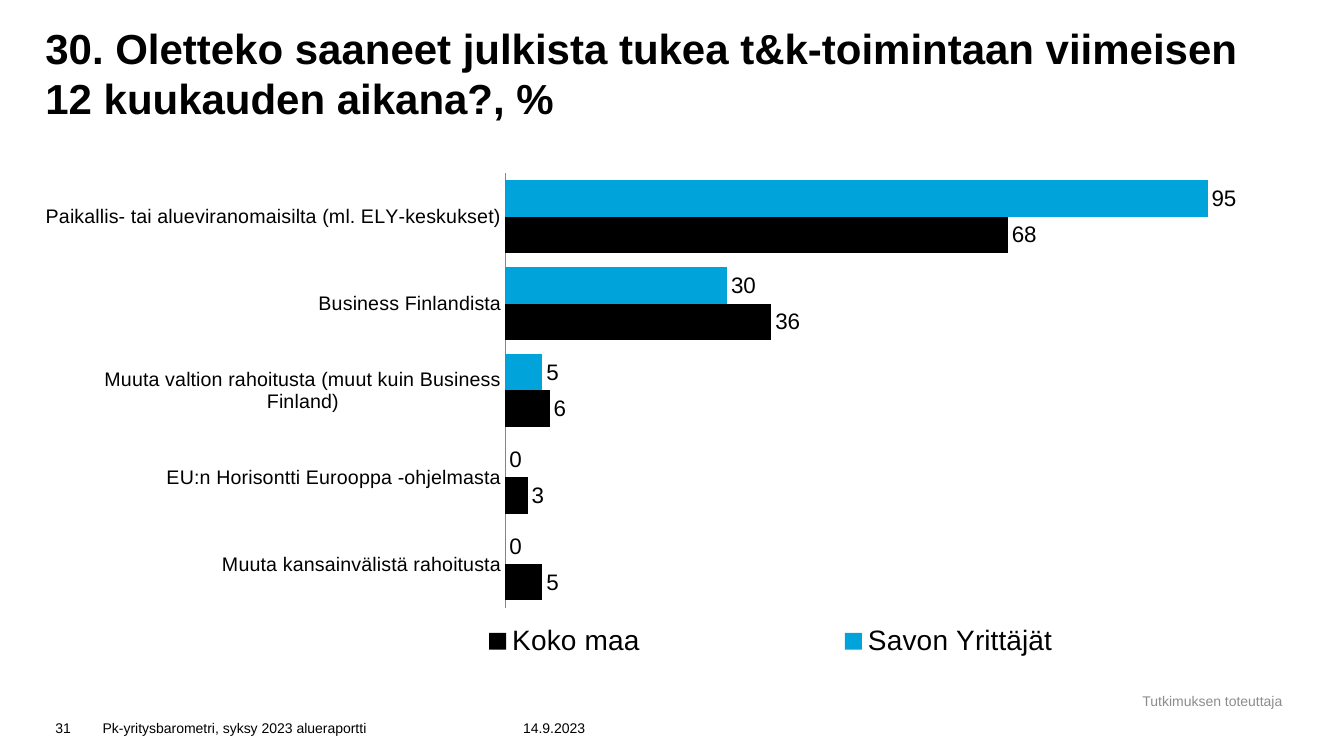
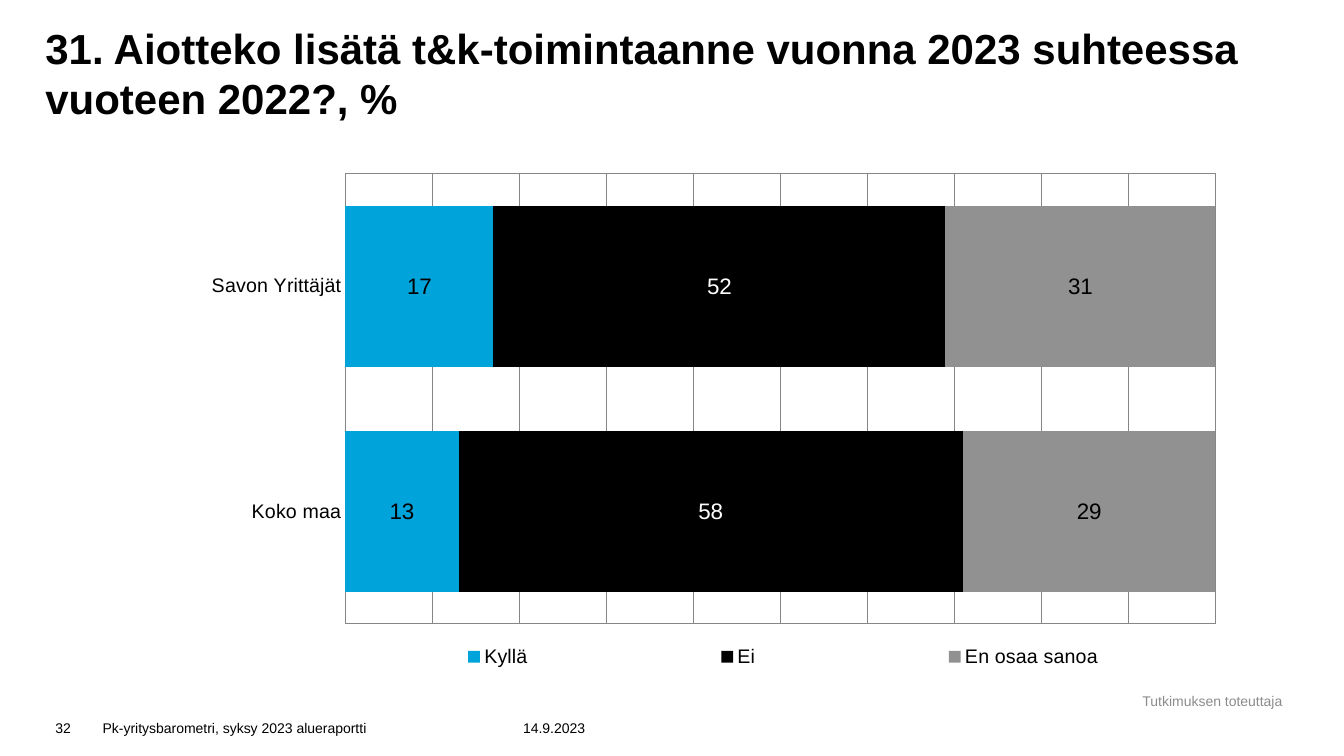
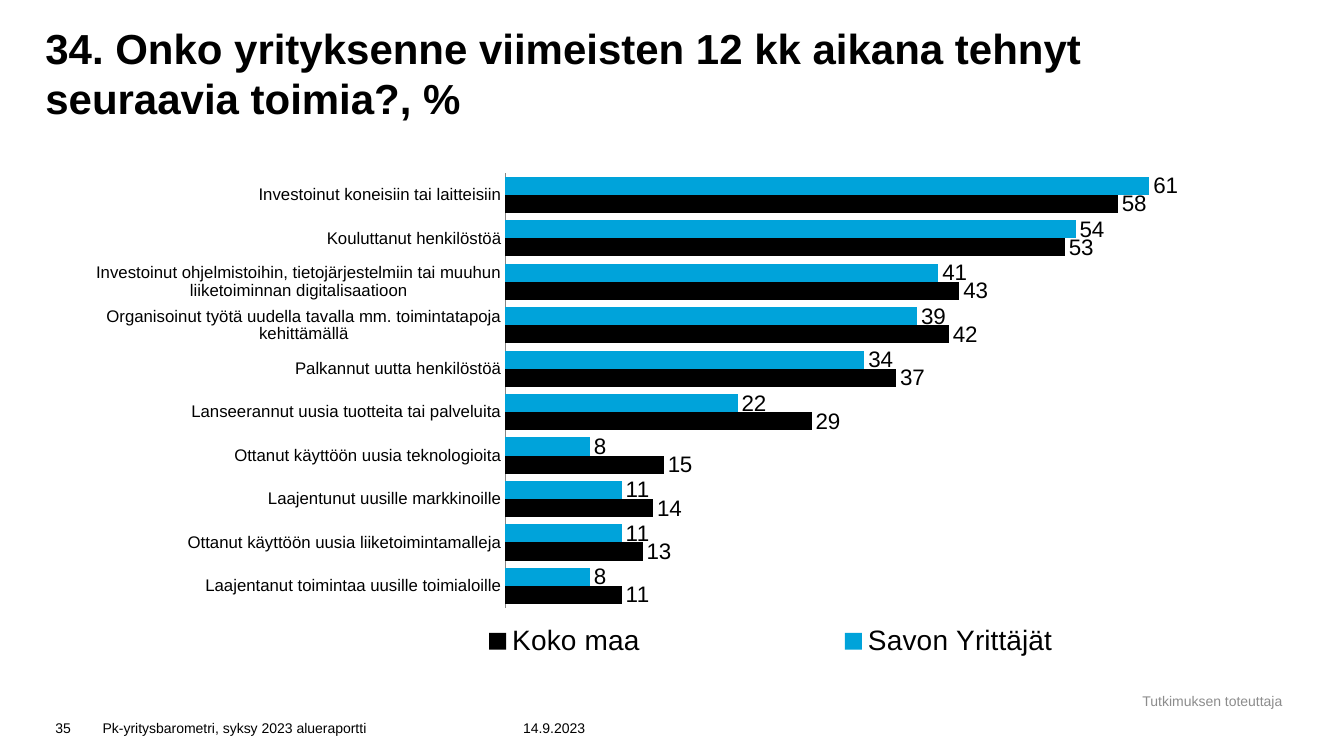
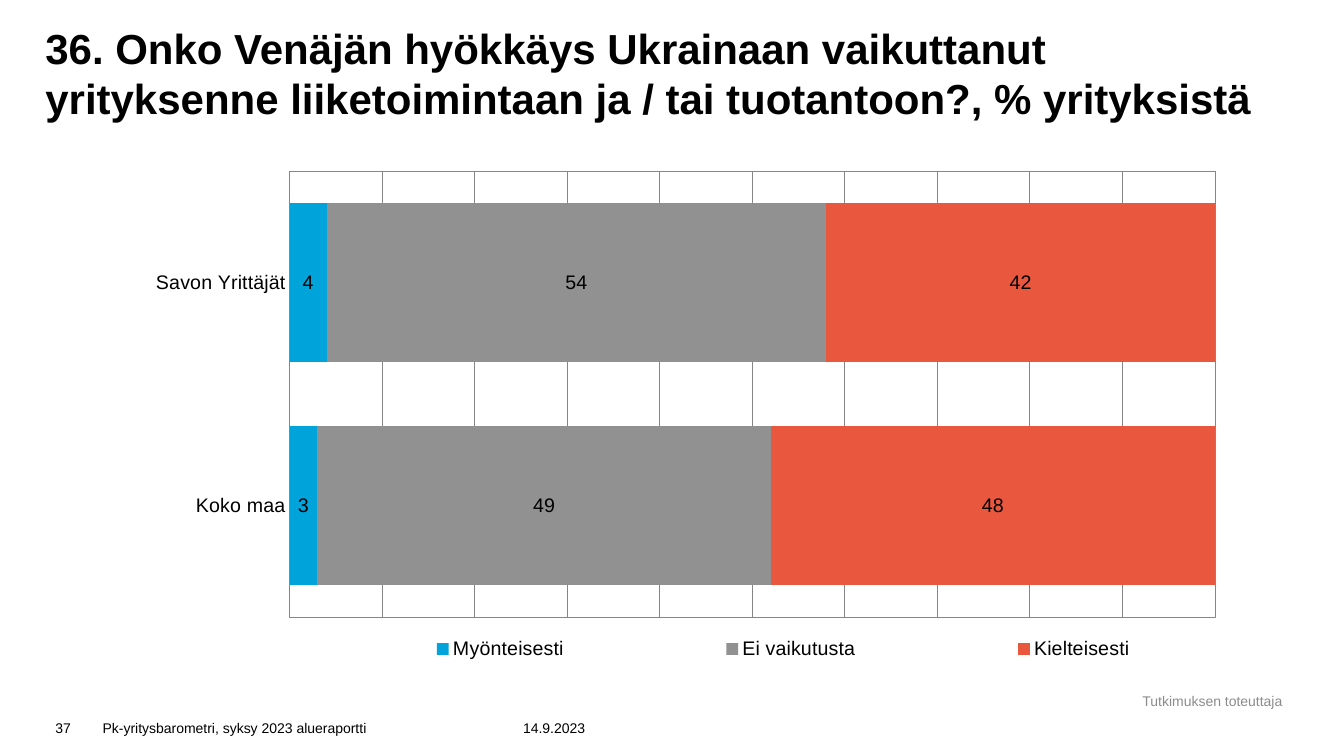
import dataclasses

import pptx
import pptx.chart.data
import pptx.dml.color
import pptx.enum.chart
import pptx.enum.text
import pptx.oxml
import pptx.oxml.ns
import pptx.util

PX = 9144  # EMU in one px, 100 px to the inch


@dataclasses.dataclass(frozen=True)
class Theme:
    font: str = "Arial"
    black: str = "000000"
    white: str = "FFFFFF"
    blue: str = "00A3DA"
    grey: str = "919191"
    red: str = "E9573F"
    line: str = "868686"
    credit: str = "8C8C8C"
    title_size: int = 30
    footer_size: int = 10
    label_size: int = 16
    axis_size: int = 14
    legend_size: int = 20
    small_legend_size: int = 14


THEME = Theme()
CHART_BOX = (45, 155, 1230, 512)
TITLE_BOX = (45, 0, 1230, 122)
FOOTER_BOX = (45, 700, 551, 35)
CREDIT_BOX = (1116, 682, 173, 26)


def rgb(colour):
    return pptx.dml.color.RGBColor.from_string(colour)


def emu(box):
    return [value * PX for value in box]


def style_font(font, size, colour=THEME.black, bold=False):
    font.name = THEME.font
    font.size = pptx.util.Pt(size)
    font.bold = bold
    font.color.rgb = rgb(colour)


def add_text(page, box, text, size, colour=THEME.black, bold=False, inset=None,
             anchor="BOTTOM", align="LEFT"):
    frame = page.shapes.add_textbox(*emu(box)).text_frame
    frame.word_wrap = True
    frame.vertical_anchor = getattr(pptx.enum.text.MSO_ANCHOR, anchor)
    if inset is not None:
        frame.margin_left = frame.margin_right = inset * PX
        frame.margin_top = frame.margin_bottom = inset * PX
    frame.text = text
    paragraph = frame.paragraphs[0]
    paragraph.alignment = getattr(pptx.enum.text.PP_ALIGN, align)
    style_font(paragraph.runs[0].font, size, colour, bold)


def add_footer(page, box, number):
    left, top, _, height = box
    for offset, width, text in (
        (0, 47, str(number)),
        (47, 417, "Pk-yritysbarometri, syksy 2023 alueraportti"),
        (464, 87, "14.9.2023"),
    ):
        add_text(page, (left + offset, top, width, height), text, THEME.footer_size)


def add_frame(page, title, number):
    """Place the title, footer and credit that every page has."""
    add_text(page, TITLE_BOX, title, THEME.title_size, bold=True, inset=0)
    add_footer(page, FOOTER_BOX, number)
    add_text(page, CREDIT_BOX, "Tutkimuksen toteuttaja", THEME.footer_size,
             THEME.credit, anchor="MIDDLE", align="CENTER")


def make_layout(area, inner=False):
    """Return a manual layout; area is x, y, width, height as shares of the chart."""
    target = '<c:layoutTarget val="inner"/>' if inner else ""
    modes = '<c:xMode val="edge"/><c:yMode val="edge"/>'
    sizes = "".join(f'<c:{tag} val="{value}"/>' for tag, value in zip("xywh", area))
    return pptx.oxml.parse_xml(
        f'<c:layout {pptx.oxml.ns.nsdecls("c")}><c:manualLayout>'
        f"{target}{modes}{sizes}</c:manualLayout></c:layout>")


def outline_plot(plot_area):
    plot_area.append(pptx.oxml.parse_xml(
        f'<c:spPr {pptx.oxml.ns.nsdecls("c", "a")}><a:noFill/><a:ln w="9525"><a:solidFill>'
        f'<a:srgbClr val="{THEME.line}"/></a:solidFill></a:ln></c:spPr>'))


def style_series(series, colour, label_colour, label_size, outside):
    series.format.fill.solid()
    series.format.fill.fore_color.rgb = rgb(colour)
    series.invert_if_negative = False
    labels = series.data_labels
    labels.show_value = True
    labels.number_format = "#,##0"
    labels.number_format_is_linked = False
    style_font(labels.font, label_size, label_colour)
    position = pptx.enum.chart.XL_LABEL_POSITION
    labels.position = position.OUTSIDE_END if outside else position.CENTER


def style_axes(chart, maximum, axis_size):
    names = chart.category_axis
    names.reverse_order = True
    names.major_tick_mark = pptx.enum.chart.XL_TICK_MARK.NONE
    names.format.line.color.rgb = rgb(THEME.line)
    style_font(names.tick_labels.font, axis_size)
    values = chart.value_axis
    values.minimum_scale = 0
    values.maximum_scale = maximum
    values.major_unit = 10
    values.has_major_gridlines = False
    values.visible = False


def add_legend(chart, area, size):
    chart.has_legend = True
    legend = chart.legend
    legend.position = pptx.enum.chart.XL_LEGEND_POSITION.RIGHT
    legend.include_in_layout = False
    style_font(legend.font, size)
    legend._element.find(pptx.oxml.ns.qn("c:legendPos")).addnext(make_layout(area))


def add_bar_chart(page, box, categories, series, plot_area, legend_area, stacked,
                  maximum, axis_size, label_size, legend_size):
    """Series are (name, values, colour, label colour)."""
    data = pptx.chart.data.CategoryChartData(number_format="0")
    data.categories = categories
    for name, values, *_ in series:
        data.add_series(name, values)
    types = pptx.enum.chart.XL_CHART_TYPE
    kind = types.BAR_STACKED if stacked else types.BAR_CLUSTERED
    chart = page.shapes.add_chart(kind, *emu(box), data).chart
    chart.has_title = False
    style_font(chart.font, legend_size)
    plot = chart.plots[0]
    plot.gap_width = 40
    plot.overlap = 100 if stacked else 0
    plot.vary_by_categories = False
    for bars, (_, _, colour, label_colour) in zip(plot.series, series):
        style_series(bars, colour, label_colour, label_size, outside=not stacked)
    style_axes(chart, maximum, axis_size)
    add_legend(chart, legend_area, legend_size)
    area = chart._chartSpace.chart.plotArea
    for old in area.findall(pptx.oxml.ns.qn("c:layout")):
        area.remove(old)
    area.insert(0, make_layout(plot_area, inner=True))
    if stacked:
        chart.value_axis.has_major_gridlines = True
        chart.value_axis.major_gridlines.format.line.color.rgb = rgb(THEME.line)
        outline_plot(area)


def add_comparison_page(page, number, title, rows, maximum, axis_size=THEME.axis_size):
    """Paired bars; rows are (category, Savon Yrittäjät, Koko maa)."""
    categories, region, country = zip(*rows)
    add_frame(page, title, number)
    add_bar_chart(
        page, CHART_BOX, categories,
        [("Savon Yrittäjät", region, THEME.blue, THEME.black),
         ("Koko maa", country, THEME.black, THEME.black)],
        (0.371, 0.033, 0.596, 0.842), (0.2, 0.89, 0.77, 0.1), False,
        maximum, axis_size, THEME.label_size, THEME.legend_size)


def add_share_page(page, number, title, series, plot_area, legend_area,
                   label_size=THEME.label_size):
    """Stacked bars that add up to the whole of each group."""
    add_frame(page, title, number)
    add_bar_chart(
        page, CHART_BOX, ["Savon Yrittäjät", "Koko maa"], series,
        plot_area, legend_area, True, 100.1, THEME.axis_size, label_size,
        THEME.small_legend_size)


SUPPORT = [
    ("Paikallis- tai alueviranomaisilta (ml. ELY-keskukset)", 95, 68),
    ("Business Finlandista", 30, 36),
    ("Muuta valtion rahoitusta (muut kuin Business Finland)", 5, 6),
    ("EU:n Horisontti Eurooppa -ohjelmasta", 0, 3),
    ("Muuta kansainvälistä rahoitusta", 0, 5),
]
ACTIONS = [
    ("Investoinut koneisiin tai laitteisiin", 61, 58),
    ("Kouluttanut henkilöstöä", 54, 53),
    ("Investoinut ohjelmistoihin, tietojärjestelmiin tai muuhun "
     "liiketoiminnan digitalisaatioon", 41, 43),
    ("Organisoinut työtä uudella tavalla mm. toimintatapoja kehittämällä", 39, 42),
    ("Palkannut uutta henkilöstöä", 34, 37),
    ("Lanseerannut uusia tuotteita tai palveluita", 22, 29),
    ("Ottanut käyttöön uusia teknologioita", 8, 15),
    ("Laajentunut uusille markkinoille", 11, 14),
    ("Ottanut käyttöön uusia liiketoimintamalleja", 11, 13),
    ("Laajentanut toimintaa uusille toimialoille", 8, 11),
]
GROWTH = [
    ("Kyllä", (17, 13), THEME.blue, THEME.black),
    ("Ei", (52, 58), THEME.black, THEME.white),
    ("En osaa sanoa", (31, 29), THEME.grey, THEME.black),
]
IMPACT = [
    ("Myönteisesti", (4, 3), THEME.blue, THEME.black),
    ("Ei vaikutusta", (54, 49), THEME.grey, THEME.black),
    ("Kielteisesti", (42, 48), THEME.red, THEME.black),
]


def main():
    deck = pptx.Presentation()
    deck.slide_width, deck.slide_height = emu((1333, 750))
    pages = [deck.slides.add_slide(deck.slide_layouts[6]) for _ in range(4)]
    add_comparison_page(
        pages[0], 31,
        "30. Oletteko saaneet julkista tukea t&k-toimintaan viimeisen 12 kuukauden aikana?, %",
        SUPPORT, 100)
    add_share_page(
        pages[1], 32,
        "31. Aiotteko lisätä t&k-toimintaanne vuonna 2023 suhteessa vuoteen 2022?, %",
        GROWTH, (0.242, 0.034, 0.702, 0.872), (0.19, 0.94, 0.81, 0.06))
    add_comparison_page(
        pages[2], 35,
        "34. Onko yrityksenne viimeisten 12 kk aikana tehnyt seuraavia toimia?, %",
        ACTIONS, 70, axis_size=12)
    add_share_page(
        pages[3], 37,
        "36. Onko Venäjän hyökkäys Ukrainaan vaikuttanut yrityksenne liiketoimintaan "
        "ja / tai tuotantoon?, % yrityksistä",
        IMPACT, (0.197, 0.029, 0.747, 0.864), (0.19, 0.92, 0.81, 0.07), label_size=14)
    deck.save("out.pptx")


if __name__ == "__main__":
    main()
